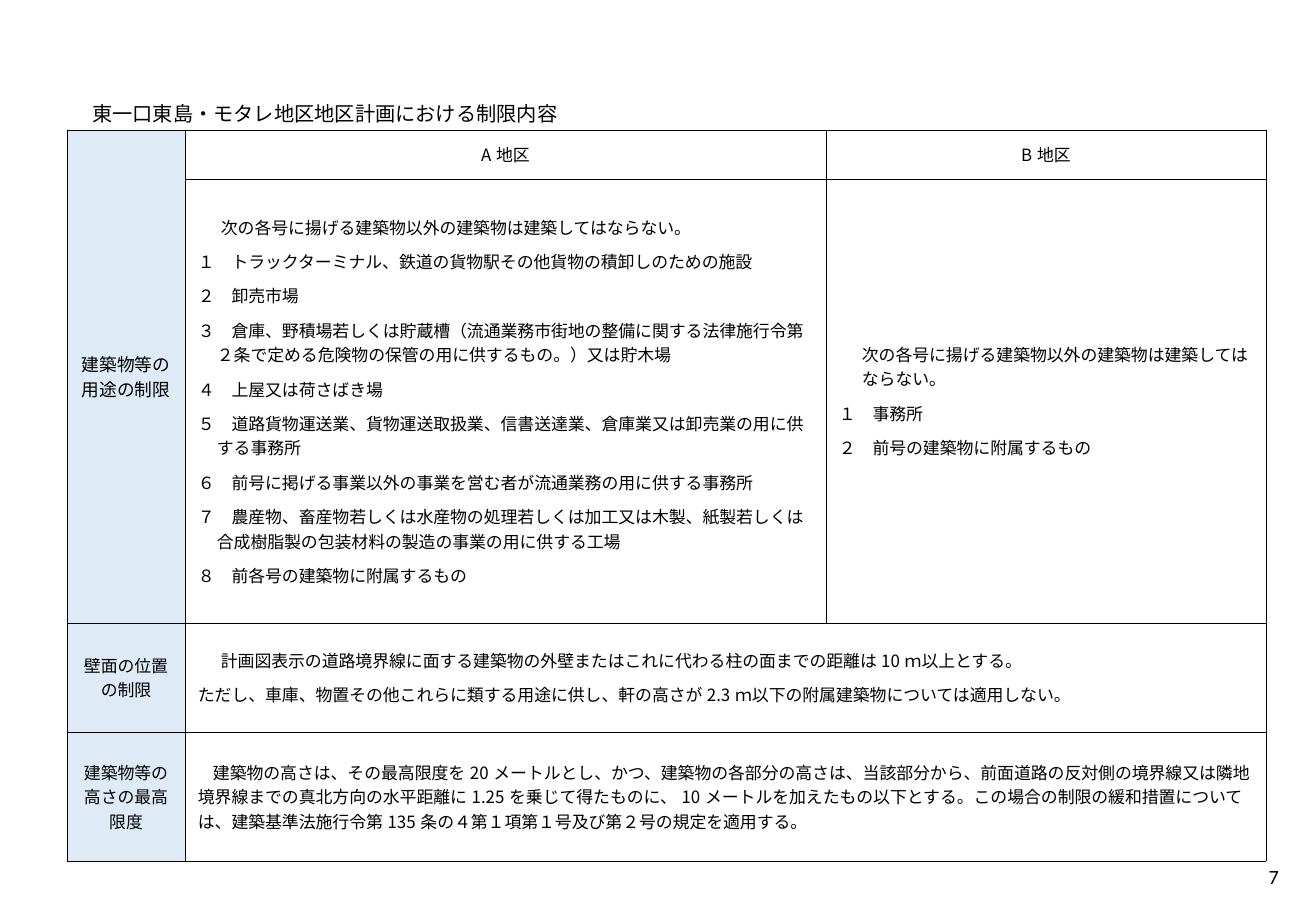
from lxml import etree
from pptx import Presentation
from pptx import util as u
from pptx.dml.color import RGBColor
from pptx.enum import lang, text
from pptx.oxml import ns

SCALE = 7526  # EMU in one px
BLACK = RGBColor(0x00, 0x00, 0x00)
WHITE = RGBColor(0xFF, 0xFF, 0xFF)
BLUE = RGBColor(0xDE, 0xEB, 0xF7)
GOTHIC = "Noto Sans CJK JP"
ALIGN = text.PP_ALIGN
MIDDLE = text.MSO_ANCHOR.MIDDLE

COLS = [118, 641, 440]
ROWS = [49, 444, 109, 129]

# Indents in px: (left, first line)
FLUSH = (0, 0)
INSET = (23, 0)
ITEM = (23, -23)
LONG = (19, -19)
LEAD = (0, 15)

LEDE = ("次の各号に揚げる建築物以外の建築物は建築してはならない。", INSET)
USE_A = [
    LEDE,
    ("１　トラックターミナル、鉄道の貨物駅その他貨物の積卸しのための施設", ITEM),
    ("２　卸売市場", ITEM),
    ("３　倉庫、野積場若しくは貯蔵槽（流通業務市街地の整備に関する法律施行令第"
     "２条で定める危険物の保管の用に供するもの。）又は貯木場", LONG),
    ("４　上屋又は荷さばき場", ITEM),
    ("５　道路貨物運送業、貨物運送取扱業、信書送達業、倉庫業又は卸売業の用に供"
     "する事務所", LONG),
    ("６　前号に掲げる事業以外の事業を営む者が流通業務の用に供する事務所", ITEM),
    ("７　農産物、畜産物若しくは水産物の処理若しくは加工又は木製、紙製若しくは"
     "合成樹脂製の包装材料の製造の事業の用に供する工場", LONG),
    ("８　前各号の建築物に附属するもの", ITEM),
]
USE_B = [
    LEDE,
    ("１　事務所", ITEM),
    ("２　前号の建築物に附属するもの", ITEM),
]
WALL = [
    ("計画図表示の道路境界線に面する建築物の外壁またはこれに代わる柱の面までの"
     "距離は10ｍ以上とする。", INSET),
    ("ただし、車庫、物置その他これらに類する用途に供し、軒の高さが2.3ｍ以下の"
     "附属建築物については適用しない。", ITEM),
]
HEIGHT = [
    ("建築物の高さは、その最高限度を20メートルとし、かつ、建築物の各部分の高さは、"
     "当該部分から、前面道路の反対側の境界線又は隣地境界線までの真北方向の水平距離に"
     "1.25を乗じて得たものに、10メートルを加えたもの以下とする。この場合の制限の"
     "緩和措置については、建築基準法施行令第135条の４第１項第１号及び第２号の規定を"
     "適用する。", LEAD),
]


def px(n):
    return u.Emu(n * SCALE)


def style(para, size, font=GOTHIC, align=ALIGN.LEFT):
    para.alignment = align
    for run in para.runs:
        run.font.size = u.Pt(size)
        run.font.name = font
        run.font.color.rgb = BLACK
        run.font.language_id = lang.MSO_LANGUAGE_ID.JAPANESE
        east = etree.SubElement(run.font._element, ns.qn("a:ea"))
        east.set("typeface", font)


def label(slide, box, words, font, align):
    frame = slide.shapes.add_textbox(*map(px, box)).text_frame
    frame.word_wrap = True
    frame.text = words
    style(frame.paragraphs[0], 12, font, align)
    return frame


def border(cell):
    props = cell._tc.get_or_add_tcPr()
    for side in ("lnL", "lnR", "lnT", "lnB"):
        line = etree.SubElement(props, ns.qn("a:" + side), w=str(u.Pt(0.5)))
        fill = etree.SubElement(line, ns.qn("a:solidFill"))
        etree.SubElement(fill, ns.qn("a:srgbClr"), val=str(BLACK))


def write(cell, items, size, align, gap):
    cell.text_frame.text = "\n".join(words for words, _ in items)
    for para, (_, (left, first)) in zip(cell.text_frame.paragraphs, items):
        style(para, size, align=align)
        para.space_before = u.Pt(gap)
        props = para._p.get_or_add_pPr()
        props.set("marL", str(px(left)))
        props.set("indent", str(px(first)))


def head(cell, *lines, size=10, gap=0):
    write(cell, [(line, FLUSH) for line in lines], size, ALIGN.CENTER, gap)


def body(cell, items):
    write(cell, items, 10, ALIGN.LEFT, 6)


def grid(slide):
    table = slide.shapes.add_table(
        len(ROWS), len(COLS), px(67), px(130), px(sum(COLS)), px(sum(ROWS))).table
    table.first_row = table.horz_banding = False
    for col, width in zip(table.columns, COLS):
        col.width = px(width)
    for row, height in zip(table.rows, ROWS):
        row.height = px(height)
    for r in range(len(ROWS)):
        for c in range(len(COLS)):
            cell = table.cell(r, c)
            border(cell)
            cell.fill.solid()
            cell.fill.fore_color.rgb = WHITE if c else BLUE
            cell.vertical_anchor = MIDDLE
            cell.margin_left = cell.margin_right = px(13)
            cell.margin_top = cell.margin_bottom = px(6)
    table.cell(0, 0).merge(table.cell(1, 0))
    for r in (2, 3):
        table.cell(r, 1).merge(table.cell(r, 2))
    return table


def main():
    prs = Presentation()
    prs.slide_width, prs.slide_height = px(1316), px(911)
    slide = prs.slides.add_slide(prs.slide_layouts[6])

    # Title
    title = label(slide, (67, 83, 516, 49),
                  "東一口東島・モタレ地区地区計画における制限内容", GOTHIC, ALIGN.CENTER)
    title.paragraphs[0].line_spacing = 1.5

    # Table of limits
    table = grid(slide)
    head(table.cell(0, 0), "建築物等の", "用途の制限", size=10.5)
    head(table.cell(0, 1), "A地区", gap=6)
    head(table.cell(0, 2), "B地区", gap=6)
    head(table.cell(2, 0), "壁面の位置の制限")
    head(table.cell(3, 0), "建築物等の高さの最高限度")
    body(table.cell(1, 1), USE_A)
    body(table.cell(1, 2), USE_B)
    body(table.cell(2, 1), WALL)
    body(table.cell(3, 1), HEIGHT)

    # Page number
    page = label(slide, (1008, 852, 283, 49), "7", "Calibri", ALIGN.RIGHT)
    page.vertical_anchor = MIDDLE

    prs.save("out.pptx")


if __name__ == "__main__":
    main()
